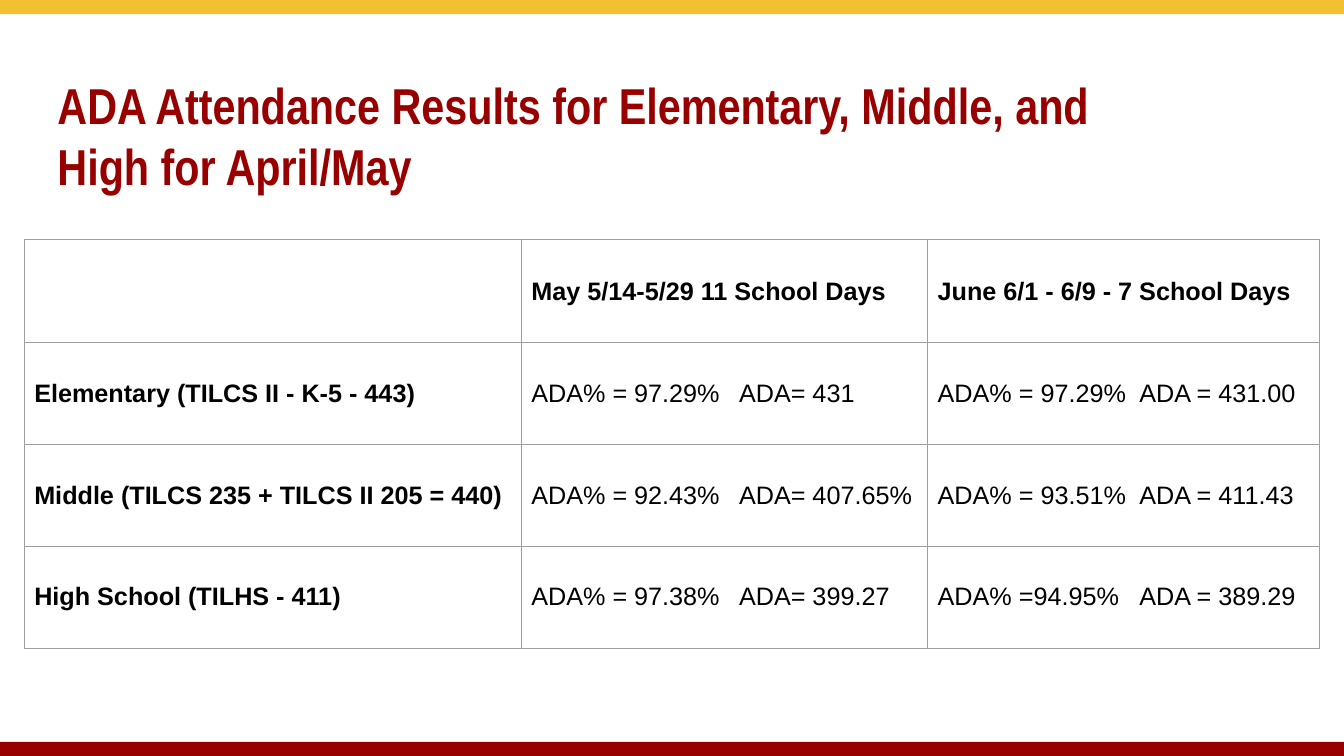
from lxml import etree
from pptx import Presentation
from pptx.dml.color import RGBColor
from pptx.enum.shapes import MSO_SHAPE
from pptx.enum.text import MSO_ANCHOR, MSO_AUTO_SIZE, PP_ALIGN
from pptx.oxml.ns import qn
from pptx.util import Inches, Pt

RECTANGLE = MSO_SHAPE.RECTANGLE
TOP, MIDDLE = MSO_ANCHOR.TOP, MSO_ANCHOR.MIDDLE
LEFT = PP_ALIGN.LEFT
NO_AUTOFIT = MSO_AUTO_SIZE.NONE
TITLE_ONLY = 5

COLORS = {"gold": "F1C131", "red": "980000", "text": "000000", "grid": "9E9E9E"}
SLIDE_WIDTH, SLIDE_HEIGHT, BAND_HEIGHT = 13.33, 7.5, 0.14
COLUMN_WIDTHS = [4.93, 4.03, 3.89]
ROW_HEIGHTS = [1.02, 1.01, 1.01, 1.01]
ADA_TAB_STOPS = [None, 2.06, 2.0]

TITLE = "ADA Attendance Results for Elementary, Middle, and High for April/May"
ATTENDANCE = [
    ["", "May 5/14-5/29 11 School Days", "June 6/1 - 6/9 - 7 School Days"],
    ["Elementary (TILCS II - K-5 - 443)", "ADA% = 97.29%\tADA= 431", "ADA% = 97.29%\tADA = 431.00"],
    ["Middle (TILCS 235 + TILCS II 205 = 440)", "ADA% = 92.43%\tADA= 407.65%", "ADA% = 93.51%\tADA = 411.43"],
    ["High School (TILHS - 411)", "ADA% = 97.38%\tADA= 399.27", "ADA% =94.95%\tADA = 389.29"],
]


def rgb(name):
    """Return the named palette colour."""
    return RGBColor.from_string(COLORS[name])


def write_text(frame, text, size=18, font="Arial", color="text", bold=False, tab_stop=None):
    """Write one left-aligned formatted paragraph into a text frame."""
    paragraph = frame.paragraphs[0]
    paragraph.alignment = LEFT
    paragraph.font.size = Pt(size)
    if tab_stop:
        tabs = etree.Element(qn("a:tabLst"))
        etree.SubElement(tabs, qn("a:tab"), pos=str(Inches(tab_stop)), algn="l")
        paragraph._p.get_or_add_pPr().insert(0, tabs)
    if text:
        run = paragraph.add_run()
        run.text = text
        run.font.size = Pt(size)
        run.font.name = font
        run.font.bold = bold
        run.font.color.rgb = rgb(color)


def add_band(slide, top, color):
    """Add a full-width coloured band."""
    band = slide.shapes.add_shape(
        RECTANGLE, Inches(0), Inches(top), Inches(SLIDE_WIDTH), Inches(BAND_HEIGHT))
    band.shadow.inherit = False
    band.fill.solid()
    band.fill.fore_color.rgb = rgb(color)
    band.line.fill.background()


def set_title(slide):
    """Place and format the slide title."""
    title = slide.shapes.title
    title.left, title.top = Inches(0.57), Inches(0.73)
    title.width, title.height = Inches(11.18), Inches(1.29)
    frame = title.text_frame
    frame.margin_left = frame.margin_right = frame.margin_bottom = Inches(0)
    frame.margin_top = Inches(0.01)
    frame.vertical_anchor = TOP
    frame.word_wrap = True
    frame.auto_size = NO_AUTOFIT
    write_text(frame, TITLE, size=36, font="Arial Narrow", color="red", bold=True)


def set_borders(cell):
    """Draw a thin grid line on each side of a cell."""
    properties = cell._tc.get_or_add_tcPr()
    for index, side in enumerate(("lnL", "lnR", "lnT", "lnB")):
        line = etree.Element(qn(f"a:{side}"), w=str(Pt(0.75)))
        fill = etree.SubElement(line, qn("a:solidFill"))
        etree.SubElement(fill, qn("a:srgbClr"), val=COLORS["grid"])
        properties.insert(index, line)


def add_attendance_table(slide):
    """Add the table of attendance by school level and period."""
    table = slide.shapes.add_table(
        len(ROW_HEIGHTS), len(COLUMN_WIDTHS), Inches(0.24), Inches(2.38),
        Inches(sum(COLUMN_WIDTHS)), Inches(sum(ROW_HEIGHTS))).table
    table.first_row = table.horz_banding = False
    for column, width in zip(table.columns, COLUMN_WIDTHS):
        column.width = Inches(width)
    for row, height in zip(table.rows, ROW_HEIGHTS):
        row.height = Inches(height)
    for row_index, texts in enumerate(ATTENDANCE):
        for column_index, text in enumerate(texts):
            cell = table.cell(row_index, column_index)
            cell.fill.background()
            cell.vertical_anchor = MIDDLE
            cell.margin_left = cell.margin_right = Inches(0.1)
            cell.margin_top = cell.margin_bottom = Inches(0.1)
            set_borders(cell)
            is_heading = row_index == 0 or column_index == 0
            write_text(cell.text_frame, text, bold=is_heading,
                       tab_stop=None if is_heading else ADA_TAB_STOPS[column_index])


def main():
    """Build and save the attendance slide."""
    presentation = Presentation()
    presentation.slide_width = Inches(SLIDE_WIDTH)
    presentation.slide_height = Inches(SLIDE_HEIGHT)
    slide = presentation.slides.add_slide(presentation.slide_layouts[TITLE_ONLY])
    add_band(slide, 0, "gold")
    add_band(slide, SLIDE_HEIGHT - BAND_HEIGHT, "red")
    set_title(slide)
    add_attendance_table(slide)
    presentation.save("out.pptx")


if __name__ == "__main__":
    main()
